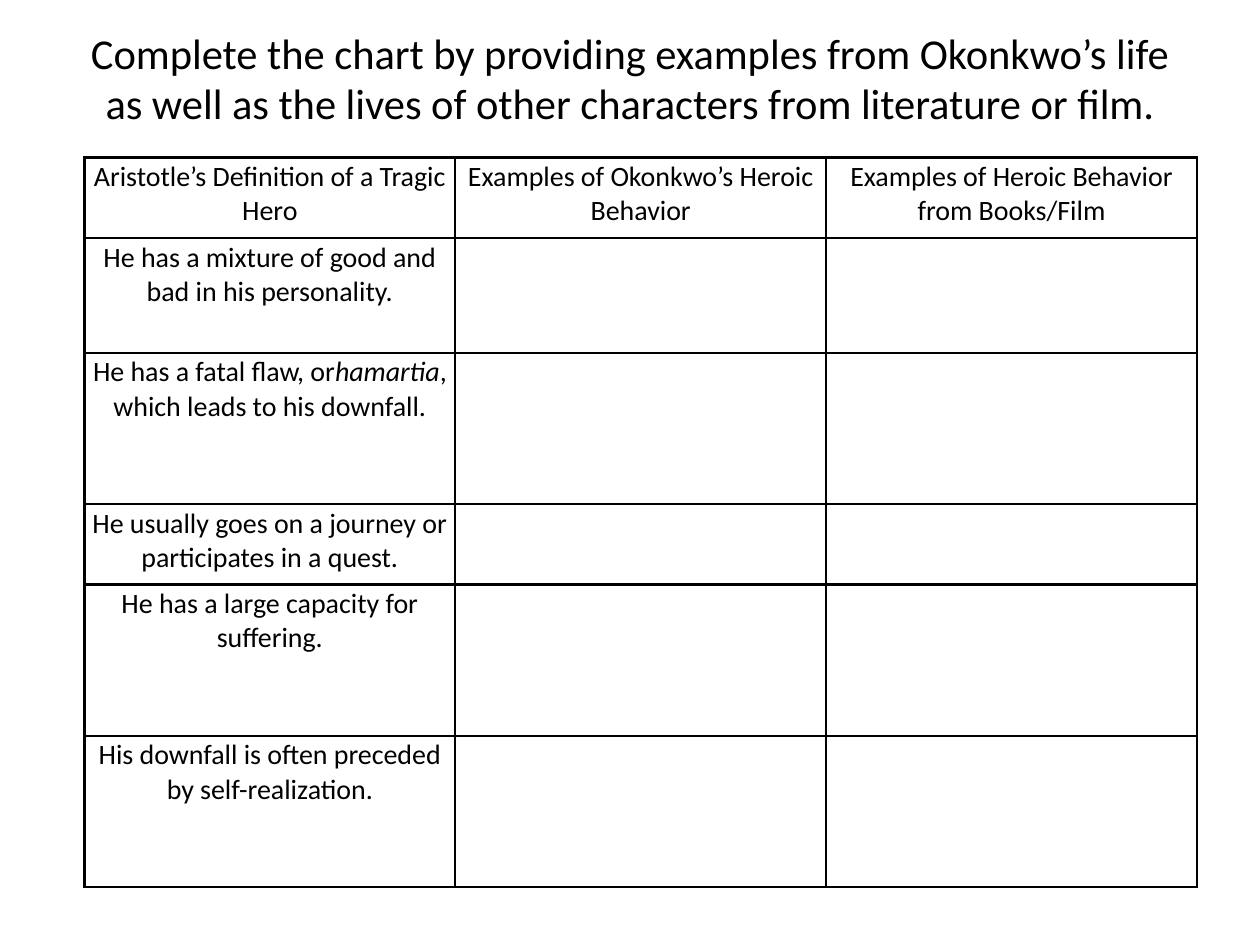
import pptx
import pptx.dml.color
import pptx.enum.text
import pptx.oxml
import pptx.oxml.ns
import pptx.util
from pptx.util import Inches

CENTER = pptx.enum.text.PP_ALIGN.CENTER
MIDDLE = pptx.enum.text.MSO_ANCHOR.MIDDLE


def style_span(span, size):
    span.font.name = "Calibri"
    span.font.size = pptx.util.Pt(size)
    span.font.color.rgb = pptx.dml.color.RGBColor.from_string("000000")


def add_borders(cell, color, width):
    """Draw all four sides of a cell; call before setting its fill."""
    for side in ("lnL", "lnR", "lnT", "lnB"):
        cell._tc.get_or_add_tcPr().append(pptx.oxml.parse_xml(
            f'<a:{side} {pptx.oxml.ns.nsdecls("a")} w="{pptx.util.Pt(width)}">'
            f'<a:solidFill><a:srgbClr val="{color}"/></a:solidFill></a:{side}>'))


deck = pptx.Presentation()
deck.slide_width, deck.slide_height = Inches(10), Inches(7.5)
page = deck.slides.add_slide(deck.slide_layouts[5])

title = page.shapes.title
title.left, title.top, title.width, title.height = (
    Inches(0.5), Inches(0.18), Inches(9), Inches(0.87))
title.text_frame.text = (
    "Complete the chart by providing examples from Okonkwo’s life "
    "as well as the lives of other characters from literature or film.")
title.text_frame.auto_size = pptx.enum.text.MSO_AUTO_SIZE.NONE
title.text_frame.vertical_anchor = MIDDLE
title.text_frame.paragraphs[0].alignment = CENTER
style_span(title.text_frame.paragraphs[0].runs[0], 24.3)

# Each cell is a list of runs; the second run of a cell is italic.
headings = [["Aristotle’s Definition of a Tragic Hero"],
            ["Examples of Okonkwo’s Heroic Behavior"],
            ["Examples of Heroic Behavior from Books/Film"]]
traits = [["He has a mixture of good and bad in his personality."],
          ["He has a fatal flaw, or", "hamartia", ", which leads to his downfall."],
          ["He usually goes on a journey or participates in a quest."],
          ["He has a large capacity for suffering."],
          ["His downfall is often preceded by self-realization."]]
rows = [headings] + [[trait, [], []] for trait in traits]
row_heights = [0.64, 0.91, 1.2, 0.64, 1.2, 1.2]

table = page.shapes.add_table(
    len(rows), len(headings), Inches(0.67), Inches(1.25),
    Inches(8.83), Inches(sum(row_heights))).table
table.first_row = table.horz_banding = False
for column in table.columns:
    column.width = Inches(8.83 / len(headings))

for r, (cells, height) in enumerate(zip(rows, row_heights)):
    table.rows[r].height = Inches(height)
    for c, texts in enumerate(cells):
        cell = table.cell(r, c)
        add_borders(cell, "000000", 1.5)
        cell.fill.solid()
        cell.fill.fore_color.rgb = pptx.dml.color.RGBColor.from_string("FFFFFF")
        if not texts:
            continue
        cell.margin_left = cell.margin_right = Inches(0.02)
        cell.margin_top = cell.margin_bottom = Inches(0.02)
        para = cell.text_frame.paragraphs[0]
        para.alignment = CENTER
        for i, text in enumerate(texts):
            span = para.add_run()
            span.text = text
            style_span(span, 16)
            if i == 1:
                span.font.italic = True

deck.save("out.pptx")
